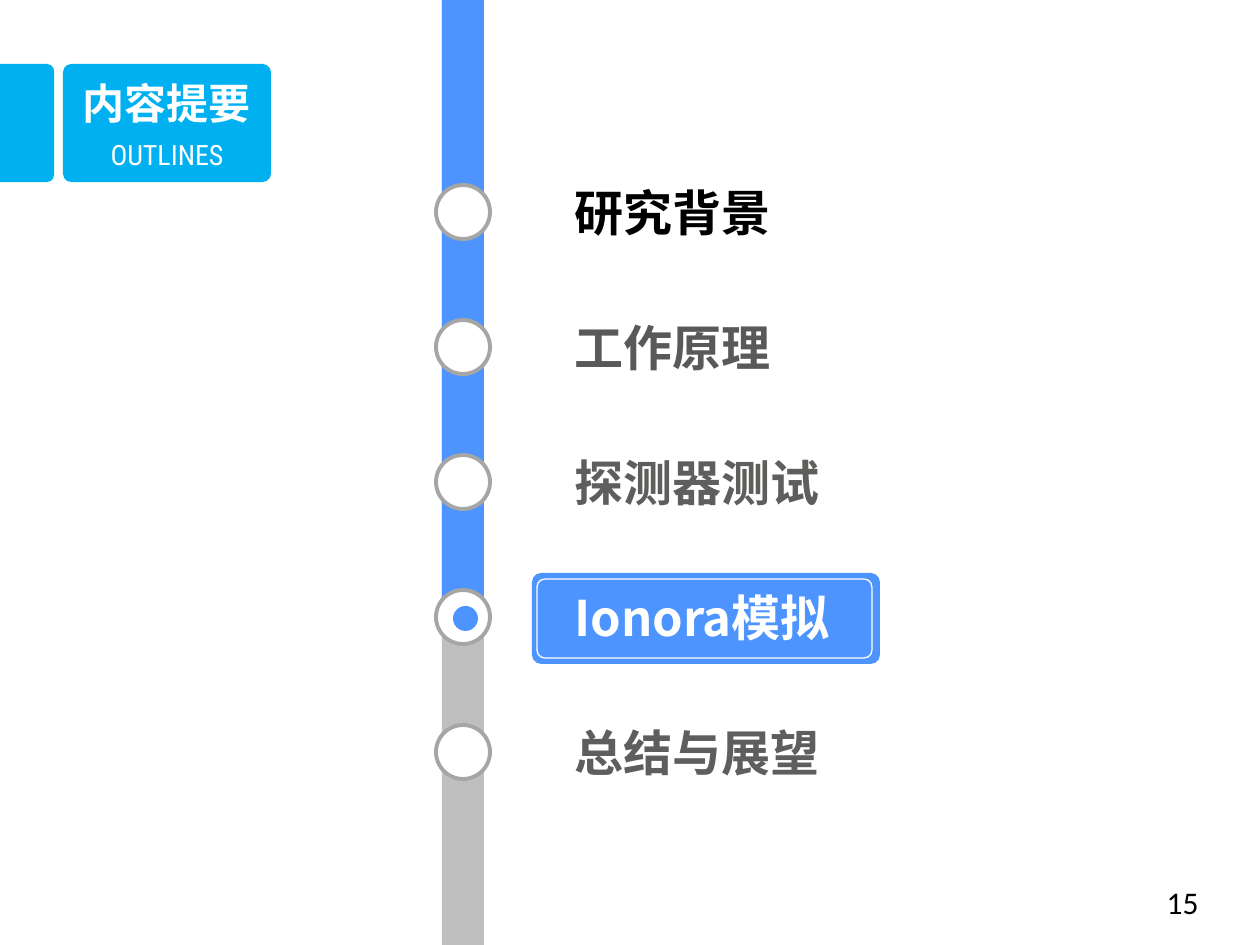
from dataclasses import dataclass
from typing import NamedTuple, Optional

from lxml import etree
from pptx import Presentation
from pptx import util as u
from pptx.dml.color import RGBColor
from pptx.enum import shapes, text
from pptx.oxml import ns

SCALE = 914400 / 126


@dataclass(frozen=True)
class Theme:
    cyan: str = "00B0F0"
    blue: str = "4D94FF"
    track: str = "BFBFBF"
    ring: str = "A6A6A6"
    white: str = "FFFFFF"
    black: str = "000000"
    dark: str = "595959"
    warm: str = "5F5E5C"
    latin: str = "Calibri"
    condensed: str = "Roboto Condensed"
    cjk_jp: str = "Noto Sans CJK JP"
    cjk_sc: str = "Noto Sans CJK SC"
    title_pt: int = 24
    subtitle_pt: int = 16
    topic_pt: int = 28
    page_pt: int = 18


class Box(NamedTuple):
    x: int
    y: int
    w: int
    h: int


class Style(NamedTuple):
    font: str
    size: int
    color: str
    bold: bool = False
    align: text.PP_ALIGN = text.PP_ALIGN.LEFT


@dataclass(frozen=True)
class Topic:
    label: str
    font: str
    color: str
    current: bool = False


T = Theme()
SHAPE = shapes.MSO_SHAPE
TOPICS = [
    Topic("研究背景", T.cjk_jp, T.black),
    Topic("工作原理", T.cjk_jp, T.dark),
    Topic("探测器测试", T.cjk_sc, T.warm),
    Topic("Ionora模拟", T.cjk_sc, T.white, current=True),
    Topic("总结与展望", T.cjk_sc, T.warm),
]
FIRST_Y, PITCH = 212, 135
TRACK_X, TRACK_W = 442, 42
RING_D, DOT_D = 54, 25


def px(n: int) -> u.Emu:
    return u.Emu(round(n * SCALE))


def add_shape(s, kind, box: Box, fill: Optional[str] = None,
              line: Optional[str] = None, width: float = 0.75,
              adj: Optional[float] = None):
    sp = s.shapes.add_shape(kind, *map(px, box))
    sp.shadow.inherit = False
    if fill:
        sp.fill.solid()
        sp.fill.fore_color.rgb = RGBColor.from_string(fill)
    else:
        sp.fill.background()
    if line:
        sp.line.color.rgb = RGBColor.from_string(line)
        sp.line.width = u.Pt(width)
    else:
        sp.line.fill.background()
    if adj is not None:
        sp.adjustments[0] = adj
    return sp


def add_text(s, box: Box, label: str, style: Style) -> None:
    tf = s.shapes.add_textbox(*map(px, box)).text_frame
    tf.word_wrap = True
    tf.vertical_anchor = text.MSO_ANCHOR.MIDDLE
    p = tf.paragraphs[0]
    p.alignment = style.align
    r = p.add_run()
    r.text = label
    r.font.name = style.font
    r.font.size = u.Pt(style.size)
    r.font.bold = style.bold
    r.font.color.rgb = RGBColor.from_string(style.color)
    east_asian = style.font if style.font.startswith("Noto") else T.cjk_sc
    etree.SubElement(r.font._element, ns.qn("a:ea"), typeface=east_asian)


def add_header(s) -> None:
    tab = add_shape(s, SHAPE.ROUND_2_SAME_RECTANGLE, Box(-32, 96, 118, 54),
                    T.cyan, adj=0.13)
    tab.rotation = 90
    add_shape(s, SHAPE.ROUNDED_RECTANGLE, Box(63, 64, 208, 118), T.cyan, adj=0.07)
    center = text.PP_ALIGN.CENTER
    add_text(s, Box(63, 131, 208, 47), "OUTLINES",
             Style(T.condensed, T.subtitle_pt, T.white, align=center))
    add_text(s, Box(63, 71, 208, 63), "内容提要",
             Style(T.latin, T.title_pt, T.white, True, center))


def add_track(s, height: int, color: str) -> None:
    add_shape(s, SHAPE.RECTANGLE, Box(TRACK_X, 0, TRACK_W, height), color)


def add_topic(s, topic: Topic, y: int) -> None:
    if topic.current:
        for box, fill, line in (
            (Box(532, y - 44, 348, 91), T.blue, None),
            (Box(537, y - 38, 335, 79), None, T.white),
        ):
            add_shape(s, SHAPE.ROUNDED_RECTANGLE, box, fill, line, adj=0.1)
    ring_x = TRACK_X + (TRACK_W - RING_D) // 2
    add_shape(s, SHAPE.OVAL, Box(ring_x, y - RING_D // 2, RING_D, RING_D),
              T.white, T.ring, 2.25)
    if topic.current:
        add_shape(s, SHAPE.OVAL, Box(453, y - DOT_D // 2 + 1, DOT_D, DOT_D), T.blue)
    add_text(s, Box(562, y - 36, 328, 72), topic.label,
             Style(topic.font, T.topic_pt, topic.color, True))


def main() -> None:
    prs = Presentation()
    prs.slide_width, prs.slide_height = px(1260), px(945)
    s = prs.slides.add_slide(prs.slide_layouts[6])
    add_header(s)
    add_track(s, 945, T.track)
    add_track(s, 606, T.blue)
    for i, topic in enumerate(TOPICS):
        add_topic(s, topic, FIRST_Y + i * PITCH)
    add_text(s, Box(1101, 878, 110, 47), "15",
             Style(T.latin, T.page_pt, T.black, align=text.PP_ALIGN.RIGHT))
    prs.save("out.pptx")


if __name__ == "__main__":
    main()
